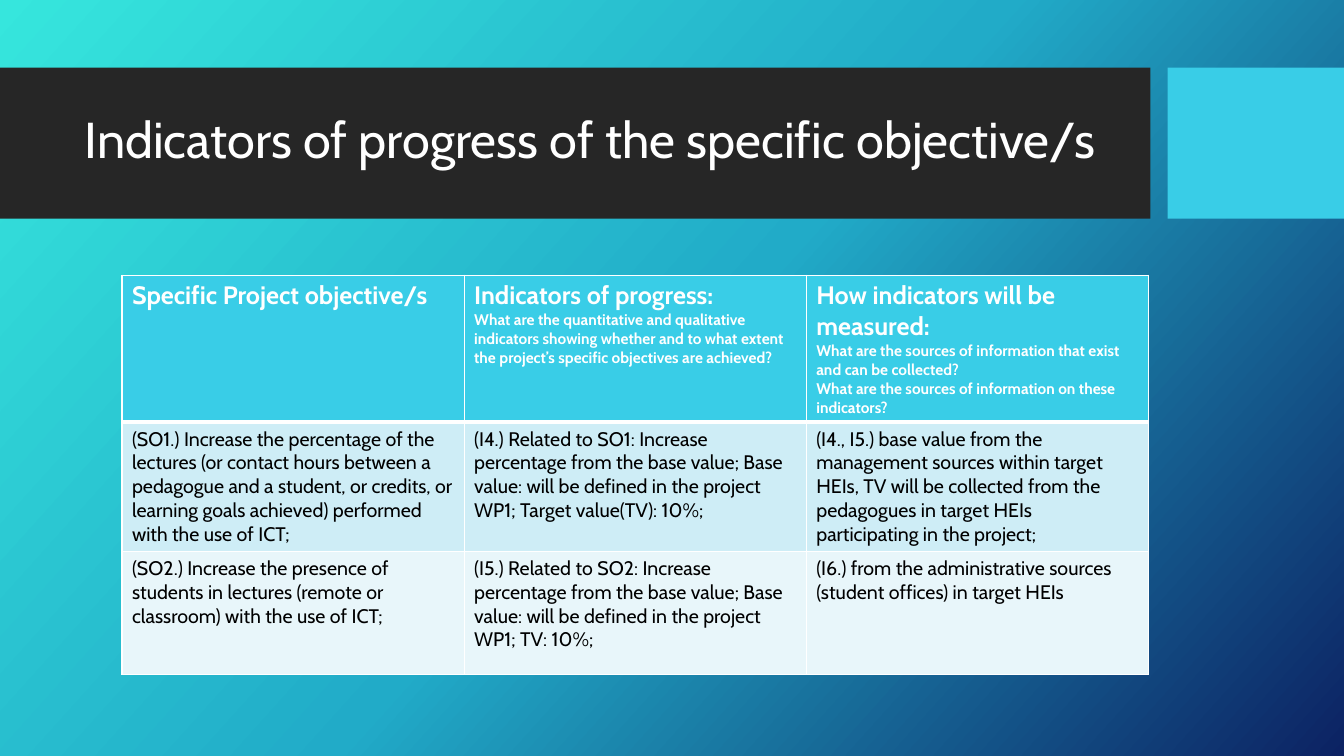
"""Build the slide on indicators of progress of the specific objectives."""
from copy import deepcopy

from lxml.etree import SubElement
from pptx import Presentation
from pptx.dml.color import RGBColor
from pptx.enum.shapes import MSO_SHAPE
from pptx.enum.text import MSO_ANCHOR, MSO_AUTO_SIZE, PP_ALIGN
from pptx.oxml.ns import qn
from pptx.util import Inches, Pt

THEME = {
    "font": "Cabin",
    "white": "FFFFFF",
    "black": "000000",
    "band": "262626",
    "accent": "39CDE7",
    "row_fills": ["39CDE7", "CEEDF6", "E8F6FA"],
    "background": [(0, "36E6DD"), (0.5, "21ABC8"), (1, "0C2263")],
    "title": 36,
    "heading": 18,
    "question": 11,
    "body": 14,
}


def format_text(paragraph, size, color, bold=False):
    formats = {"name": THEME["font"], "size": Pt(size), "bold": bold}
    for name, value in formats.items():
        setattr(paragraph.font, name, value)
    paragraph.font.color.rgb = RGBColor.from_string(color)


def add_border(cell, side, width):
    line = SubElement(cell._tc.get_or_add_tcPr(), qn(f"a:ln{side}"), w=str(Pt(width)))
    fill = SubElement(line, qn("a:solidFill"))
    SubElement(fill, qn("a:srgbClr"), val=THEME["white"])


presentation = Presentation()
presentation.slide_width = Inches(13.33)
presentation.slide_height = Inches(7.5)
slide = presentation.slides.add_slide(presentation.slide_layouts[5])

background = slide.background.fill
background.gradient()
background.gradient_angle = 360 - 42
stop_list = next(slide.element.iter(qn("a:gsLst")))
stop_list.insert(1, deepcopy(stop_list[0]))
for stop, (position, color) in zip(background.gradient_stops, THEME["background"]):
    stop.position = position
    stop.color.rgb = RGBColor.from_string(color)

for left, width, color in [(0, 11.41, THEME["band"]), (11.58, 1.75, THEME["accent"])]:
    band = slide.shapes.add_shape(
        MSO_SHAPE.RECTANGLE, Inches(left), Inches(0.67), Inches(width), Inches(1.5)
    )
    band.shadow.inherit = False
    band.fill.solid()
    band.fill.fore_color.rgb = RGBColor.from_string(color)
    band.line.fill.background()

title = slide.shapes.title
title.element.getparent().append(title.element)
title_box = {
    "left": Inches(0.74), "top": Inches(0.82),
    "width": Inches(10.51), "height": Inches(1.18),
}
for name, value in title_box.items():
    setattr(title, name, value)
title.text_frame.text = "Indicators of progress of the specific objective/s"
title.text_frame.auto_size = MSO_AUTO_SIZE.NONE
title.text_frame.vertical_anchor = MSO_ANCHOR.MIDDLE
title_paragraph = title.text_frame.paragraphs[0]
title_paragraph.alignment = PP_ALIGN.LEFT
title_paragraph.line_spacing = 0.9
format_text(title_paragraph, THEME["title"], THEME["white"])

table_rows = [
    [
        ["Specific Project objective/s"],
        [
            "Indicators of progress:",
            "What are the quantitative and qualitative indicators showing whether and to "
            "what extent the project’s specific objectives are achieved?",
        ],
        [
            "How indicators will be measured:",
            "What are the sources of information that exist and can be collected?\v"
            "What are the sources of information on these indicators?",
        ],
    ],
    [
        ["(SO1.) Increase the percentage of the lectures (or contact hours between a "
         "pedagogue and a student, or credits, or learning goals achieved) performed "
         "with the use of ICT;"],
        ["(I4.) Related to SO1: Increase percentage from the base value; Base value: "
         "will be defined in the project WP1; Target value(TV): 10%;"],
        ["(I4., I5.) base value from the management sources within target HEIs, TV will "
         "be collected from the pedagogues in target HEIs participating in the project;"],
    ],
    [
        ["(SO2.) Increase the presence of students in lectures (remote or classroom) "
         "with the use of ICT;"],
        ["(I5.) Related to SO2: Increase percentage from the base value; Base value: "
         "will be defined in the project WP1; TV: 10%;"],
        ["(I6.) from the administrative sources (student offices) in target HEIs"],
    ],
]
row_heights = [1.45, 1.28, 1.22]

table = slide.shapes.add_table(
    3, 3, Inches(1.21), Inches(2.73), Inches(10.18), Inches(sum(row_heights))
).table
for row_index, (row, height) in enumerate(zip(table_rows, row_heights)):
    table.rows[row_index].height = Inches(height)
    is_header = row_index == 0
    for column_index, texts in enumerate(row):
        cell = table.cell(row_index, column_index)
        top_width = 3 if row_index == 1 else 1
        bottom_width = 3 if is_header else 1
        for side, width in [("L", 1), ("R", 1), ("T", top_width), ("B", bottom_width)]:
            add_border(cell, side, width)
        cell.fill.solid()
        cell.fill.fore_color.rgb = RGBColor.from_string(THEME["row_fills"][row_index])
        cell.text = "\n".join(texts)
        for paragraph_index, paragraph in enumerate(cell.text_frame.paragraphs):
            if is_header:
                size = THEME["question" if paragraph_index else "heading"]
                format_text(paragraph, size, THEME["white"], bold=True)
            else:
                format_text(paragraph, THEME["body"], THEME["black"])

presentation.save("out.pptx")
